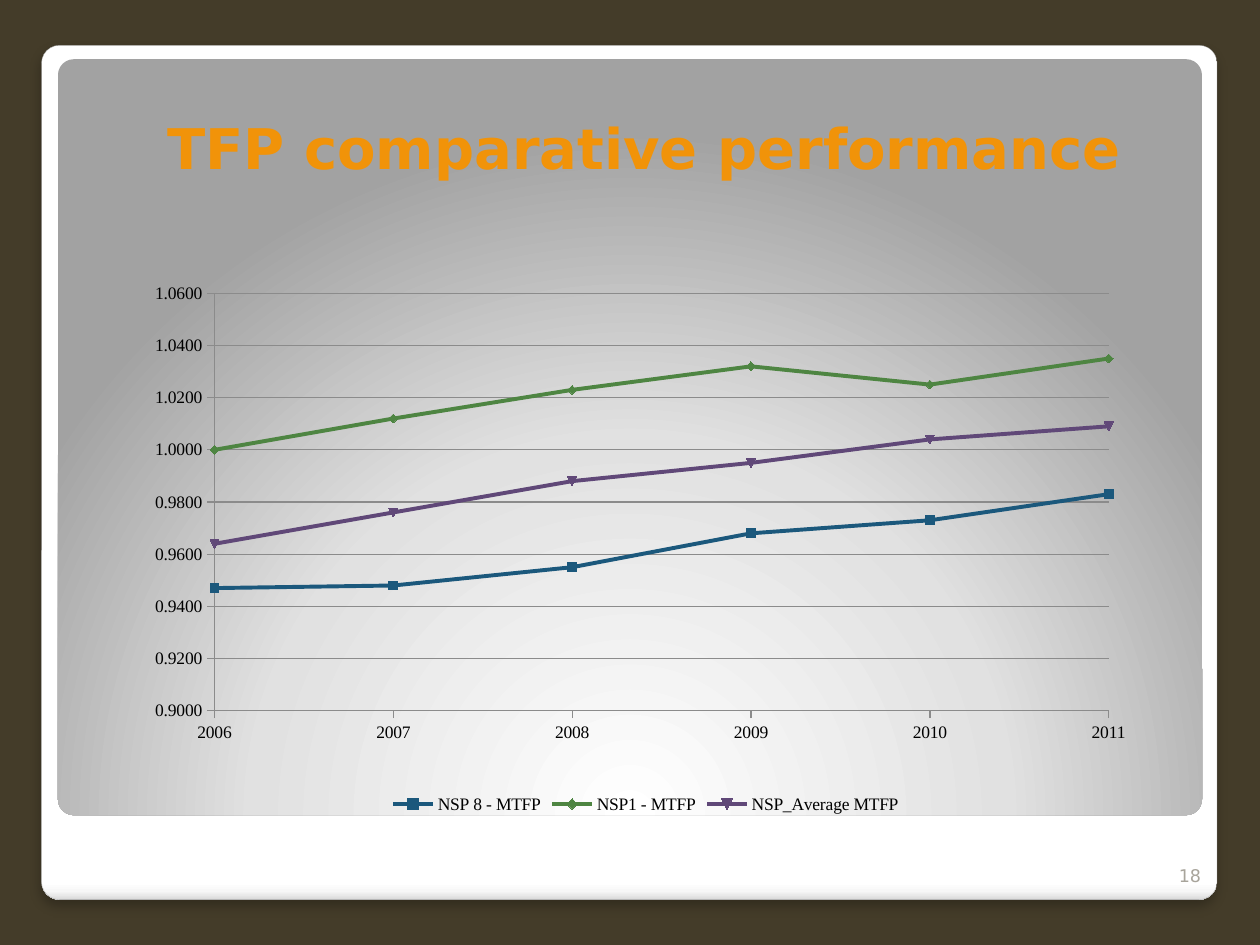
from dataclasses import dataclass

from lxml import etree
from pptx import Presentation
from pptx.chart.data import CategoryChartData
from pptx.dml.color import RGBColor
from pptx.enum.chart import XL_CHART_TYPE as ChartType
from pptx.enum.chart import XL_LEGEND_POSITION as LegendPosition
from pptx.enum.chart import XL_TICK_MARK as TickMark
from pptx.enum.shapes import MSO_SHAPE as Preset
from pptx.enum.text import MSO_ANCHOR as Anchor
from pptx.enum.text import PP_ALIGN as Align
from pptx.oxml import parse_xml
from pptx.oxml.ns import nsdecls, qn
from pptx.util import Inches, Pt

SLIDE_W, SLIDE_H = Inches(10), Inches(7.5)
HEADING_FONT, CHART_FONT = "DejaVu Sans", "Times New Roman"
COLORS = {
    "backdrop": "443C29", "frame": "A4A4A4", "title": "F19309",
    "page": "A8A49B", "axis": "8B8B8B", "label": "000000",
    "nsp8": "1B587C", "nsp1": "4E8542", "average": "604878",
}


@dataclass(frozen=True)
class Box:
    """A rectangle in percent of the slide's width and height."""
    left: float
    top: float
    width: float
    height: float

    def emu(self) -> tuple[int, int, int, int]:
        return (int(SLIDE_W * self.left / 100), int(SLIDE_H * self.top / 100),
                int(SLIDE_W * self.width / 100), int(SLIDE_H * self.height / 100))


@dataclass(frozen=True)
class Panel:
    box: Box
    stops: tuple[tuple[int, str], ...]
    direction: str


@dataclass(frozen=True)
class Provider:
    name: str
    color: str
    index: tuple[float, ...]


PANELS = (
    Panel(Box(3.3, 4.8, 93.3, 90.4),
          ((0, "FFFFFF"), (98, "FFFFFF"), (99, "F7F7F7"), (100, "DADADA")),
          '<a:lin ang="5400000" scaled="0"/>'),
    Panel(Box(4.6, 6.27, 90.8, 80),
          ((0, "FFFFFF"), (55, "E1E1E1"), (100, "A2A2A2")),
          '<a:path path="circle">'
          '<a:fillToRect l="50000" t="175000" r="50000" b="-75000"/></a:path>'),
)
YEARS = [str(year) for year in range(2006, 2012)]
PROVIDERS = (
    Provider("NSP 8 - MTFP", "nsp8", (0.947, 0.948, 0.955, 0.968, 0.973, 0.983)),
    Provider("NSP1 - MTFP", "nsp1", (1, 1.012, 1.023, 1.032, 1.025, 1.035)),
    Provider("NSP_Average MTFP", "average", (0.964, 0.976, 0.988, 0.995, 1.004, 1.009)),
)


def rgb(key: str) -> RGBColor:
    return RGBColor.from_string(COLORS[key])


def draw_panel(slide, panel: Panel):
    shape = slide.shapes.add_shape(Preset.ROUNDED_RECTANGLE, *panel.box.emu())
    shape.adjustments[0] = 0.021
    shape.shadow.inherit = False
    shape.line.fill.background()
    stops = "".join(f'<a:gs pos="{share * 1000}"><a:srgbClr val="{color}"/></a:gs>'
                    for share, color in panel.stops)
    gradient = parse_xml(f'<a:gradFill {nsdecls("a")} rotWithShape="1">'
                         f'<a:gsLst>{stops}</a:gsLst>{panel.direction}</a:gradFill>')
    shape._element.spPr.find(qn("a:prstGeom")).addnext(gradient)
    return shape


def add_frame_edge(frame) -> None:
    frame.line.color.rgb = rgb("frame")
    frame.line.width = Pt(0.16)
    effects = frame._element.spPr.find(qn("a:effectLst"))
    effects.append(parse_xml(
        f'<a:outerShdw {nsdecls("a")} blurRad="{Pt(6)}" dist="{Pt(4)}" dir="5400000" '
        'algn="t" rotWithShape="0"><a:srgbClr val="000000"><a:alpha val="25000"/>'
        '</a:srgbClr></a:outerShdw>'))


def write(shape, text: str, size: float, color: str, align: Align,
          anchor: Anchor, bold: bool = False) -> None:
    frame = shape.text_frame
    frame.word_wrap = True
    frame.vertical_anchor = anchor
    paragraph = frame.paragraphs[0]
    paragraph.alignment = align
    run = paragraph.add_run()
    run.text = text
    run.font.name, run.font.size, run.font.bold = HEADING_FONT, Pt(size), bold
    run.font.color.rgb = rgb(color)


def style_font(font) -> None:
    font.name, font.size = CHART_FONT, Pt(10)
    font.color.rgb = rgb("label")


def style_line(line, color: str, width: float) -> None:
    line.color.rgb = rgb(color)
    line.width = Pt(width)


def place_plot(chart, **shares: float) -> None:
    """Fix the inner plot area and start the lines on the value axis."""
    plot_area = chart._chartSpace.chart.plotArea
    for old in plot_area.findall(qn("c:layout")):
        plot_area.remove(old)
    manual = "".join(f'<c:{tag} val="{value}"/>' for tag, value in shares.items())
    plot_area.insert(0, parse_xml(
        f'<c:layout {nsdecls("c")}><c:manualLayout><c:layoutTarget val="inner"/>'
        f'<c:xMode val="edge"/><c:yMode val="edge"/>{manual}</c:manualLayout></c:layout>'))
    value_axis = plot_area.find(qn("c:valAx"))
    crossing = value_axis.find(qn("c:crossBetween"))
    if crossing is None:
        crossing = etree.Element(qn("c:crossBetween"))
        value_axis.find(qn("c:crosses")).addnext(crossing)
    crossing.set("val", "midCat")


def draw_chart(slide, box: Box) -> None:
    data = CategoryChartData(number_format="0.0000")
    data.categories = YEARS
    for provider in PROVIDERS:
        data.add_series(provider.name, provider.index)
    chart = slide.shapes.add_chart(ChartType.LINE_MARKERS, *box.emu(), data).chart
    chart.has_title = False
    style_font(chart.font)
    place_plot(chart, x=0.094, y=0.018, w=0.842, h=0.78)

    # Axes and gridlines
    for axis in (chart.category_axis, chart.value_axis):
        axis.major_tick_mark, axis.minor_tick_mark = TickMark.OUTSIDE, TickMark.NONE
        style_line(axis.format.line, "axis", 0.75)
        style_font(axis.tick_labels.font)
    values = chart.value_axis
    values.minimum_scale, values.maximum_scale, values.major_unit = 0.9, 1.06, 0.02
    values.tick_labels.number_format = "0.0000"
    values.tick_labels.number_format_is_linked = False
    values.has_major_gridlines = True
    style_line(values.major_gridlines.format.line, "axis", 0.75)

    # Series
    chart.plots[0].vary_by_categories = False
    for series, provider in zip(chart.plots[0].series, PROVIDERS):
        series.smooth = False
        style_line(series.format.line, provider.color, 2.25)
        marker = series.marker.format
        marker.fill.solid()
        marker.fill.fore_color.rgb = rgb(provider.color)
        marker.line.color.rgb = rgb(provider.color)

    # Legend
    chart.has_legend = True
    chart.legend.position = LegendPosition.BOTTOM
    chart.legend.include_in_layout = False
    style_font(chart.legend.font)


def main() -> None:
    deck = Presentation()
    deck.slide_width, deck.slide_height = SLIDE_W, SLIDE_H
    slide = deck.slides.add_slide(deck.slide_layouts[5])
    slide.background.fill.solid()
    slide.background.fill.fore_color.rgb = rgb("backdrop")

    # Framed panel behind the content
    frame, _ = [draw_panel(slide, panel) for panel in PANELS]
    add_frame_edge(frame)

    # Title, brought in front of the panels
    title = slide.shapes.title
    title.left, title.top, title.width, title.height = Box(5.9, 10.27, 89.5, 10.67).emu()
    title.text_frame.margin_left = Inches(0.2)
    write(title, "TFP comparative performance", 32, "title",
          Align.CENTER, Anchor.MIDDLE, bold=True)
    slide.shapes._spTree.append(title._element)

    # Page number
    page = slide.shapes.add_textbox(*Box(91.3, 89.07, 5, 5.33).emu())
    write(page, "18", 10, "page", Align.RIGHT, Anchor.BOTTOM)

    draw_chart(slide, Box(9.1, 30, 84.3, 56.67))
    deck.save("out.pptx")


if __name__ == "__main__":
    main()
